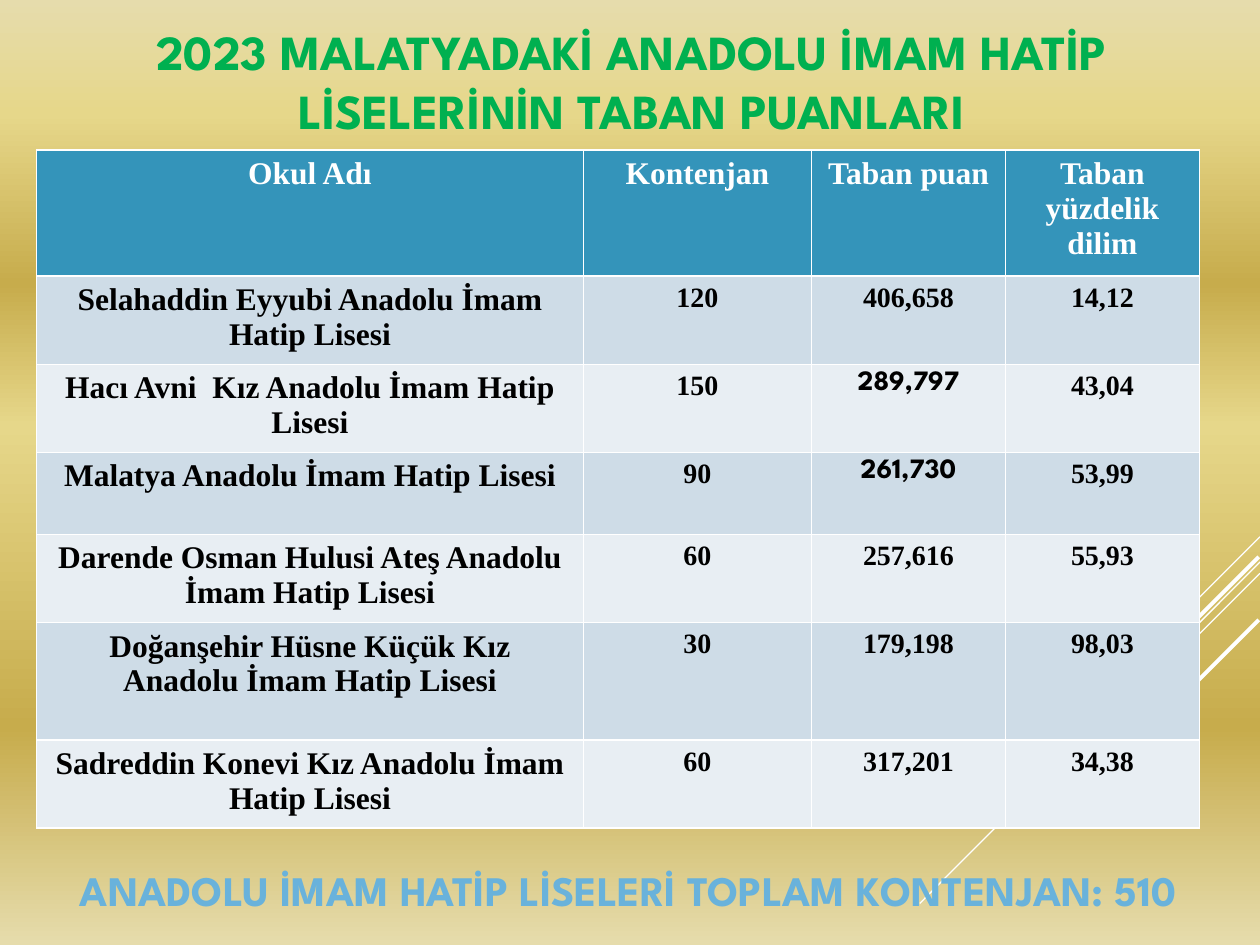
from lxml import etree
from pptx import Presentation
from pptx.dml.color import RGBColor
from pptx.enum.shapes import MSO_CONNECTOR
from pptx.enum.text import MSO_ANCHOR, PP_ALIGN
from pptx.oxml.ns import qn
from pptx.util import Inches, Pt

STRAIGHT = MSO_CONNECTOR.STRAIGHT
CENTER = PP_ALIGN.CENTER
MIDDLE = MSO_ANCHOR.MIDDLE

COLORS = {
    "white": "FFFFFF", "black": "000000", "title": "00B050", "total": "69B2DB",
    "header": "3494BA", "odd": "CEDCE7", "even": "E8EEF3",
    "pale": "E6DCAC", "light": "E6D78A", "dark": "C7AC4C",
}
DISPLAY, SERIF = "League Spartan", "Times New Roman"

GRADIENT = [(0, "pale"), (12, "light"), (30, "dark"),
            (45, "light"), (77, "dark"), (100, "pale")]
# Start x, start y, horizontal run, vertical run, width in points
RAYS = [
    (10, 4.26, 0.83, 0.83, 0.75),
    (10, 4.46, 2.7, 2.71, 0.75),
    (10, 4.55, 1.72, 1.72, 0.75),
    (9.99, 4.42, 1.57, 1.57, 2.25),
    (9.99, 4.92, 1.14, 1.14, 2.25),
]
COL_WIDTHS = [4.34, 1.81, 1.54, 1.54]
TALL, SHORT = 0.93, 0.65
ROW_HEIGHTS = [TALL, SHORT, SHORT, SHORT, SHORT, TALL, SHORT]
HEADER = ["Okul Adı", "Kontenjan", "Taban puan", "Taban yüzdelik dilim"]
SCHOOLS = [
    ("Selahaddin Eyyubi Anadolu İmam Hatip Lisesi", "120", "406,658", "14,12"),
    ("Hacı Avni  Kız Anadolu İmam Hatip Lisesi", "150", "289,797", "43,04"),
    ("Malatya Anadolu İmam Hatip Lisesi", "90", "261,730", "53,99"),
    ("Darende Osman Hulusi Ateş Anadolu İmam Hatip Lisesi", "60", "257,616", "55,93"),
    ("Doğanşehir Hüsne Küçük Kız Anadolu İmam Hatip Lisesi", "30", "179,198", "98,03"),
    ("Sadreddin Konevi Kız Anadolu İmam Hatip Lisesi", "60", "317,201", "34,38"),
]
DISPLAY_SCORES = {"289,797", "261,730"}


def rgb(name):
    return RGBColor.from_string(COLORS[name])


def paint_background(s):
    """Fill the slide with the gold gradient, running from top to bottom."""
    s.background.fill.gradient()
    stops = s.element.xpath(".//a:gsLst")[0]
    for stop in list(stops):
        stops.remove(stop)
    for percent, name in GRADIENT:
        stop = etree.SubElement(stops, qn("a:gs"), pos=str(percent * 1000))
        etree.SubElement(stop, qn("a:srgbClr"), val=COLORS[name])
    s.element.xpath(".//a:gradFill/a:lin")[0].set("ang", str(90 * 60000))


def add_ray(s, x, y, run, drop, width):
    line = s.shapes.add_connector(STRAIGHT, Inches(x), Inches(y),
                                  Inches(x - run), Inches(y + drop))
    line.line.color.rgb = rgb("white")
    line.line.width = Pt(width)
    etree.SubElement(line.element.spPr, qn("a:effectLst"))


def write(tf, text, size, font, color):
    p = tf.paragraphs[0]
    p.alignment = CENTER
    r = p.add_run()
    r.text = text
    r.font.size = Pt(size)
    r.font.name = font
    r.font.bold = True
    r.font.color.rgb = rgb(color)


def add_heading(s, box, text, size, color, margin_left=0.1):
    tf = s.shapes.add_textbox(*map(Inches, box)).text_frame
    tf.word_wrap = True
    tf.vertical_anchor = MIDDLE
    tf.margin_left = Inches(margin_left)
    write(tf, text, size, DISPLAY, color)


def fill_cell(cell, text, fill, size, color):
    cell.fill.solid()
    cell.fill.fore_color.rgb = rgb(fill)
    font = DISPLAY if text in DISPLAY_SCORES else SERIF
    write(cell.text_frame, text, size, font, color)


def add_school_table(s, left, top):
    table = s.shapes.add_table(
        len(ROW_HEIGHTS), len(COL_WIDTHS), Inches(left), Inches(top),
        Inches(sum(COL_WIDTHS)), Inches(sum(ROW_HEIGHTS))).table
    for column, width in zip(table.columns, COL_WIDTHS):
        column.width = Inches(width)
    for row, height in zip(table.rows, ROW_HEIGHTS):
        row.height = Inches(height)
    for c, text in enumerate(HEADER):
        fill_cell(table.cell(0, c), text, "header", 18, "white")
    for r, school in enumerate(SCHOOLS, start=1):
        for c, text in enumerate(school):
            fill_cell(table.cell(r, c), text, "odd" if r % 2 else "even",
                      16 if c else 18, "black")


def main():
    prs = Presentation()
    prs.slide_width, prs.slide_height = Inches(10), Inches(7.5)
    s = prs.slides.add_slide(prs.slide_layouts[6])
    paint_background(s)
    for ray in RAYS:
        add_ray(s, *ray)
    add_heading(s, (0.51, 0.21, 9, 0.85),
                "2023 MALATYADAKİ ANADOLU İMAM HATİP LİSELERİNİN TABAN PUANLARI",
                28, "title")
    add_school_table(s, 0.29, 1.19)
    add_heading(s, (-0.28, 6.71, 10, 0.7),
                "ANADOLU İMAM HATİP LİSELERİ TOPLAM KONTENJAN: 510",
                24, "total", margin_left=0.63)
    prs.save("out.pptx")


if __name__ == "__main__":
    main()
